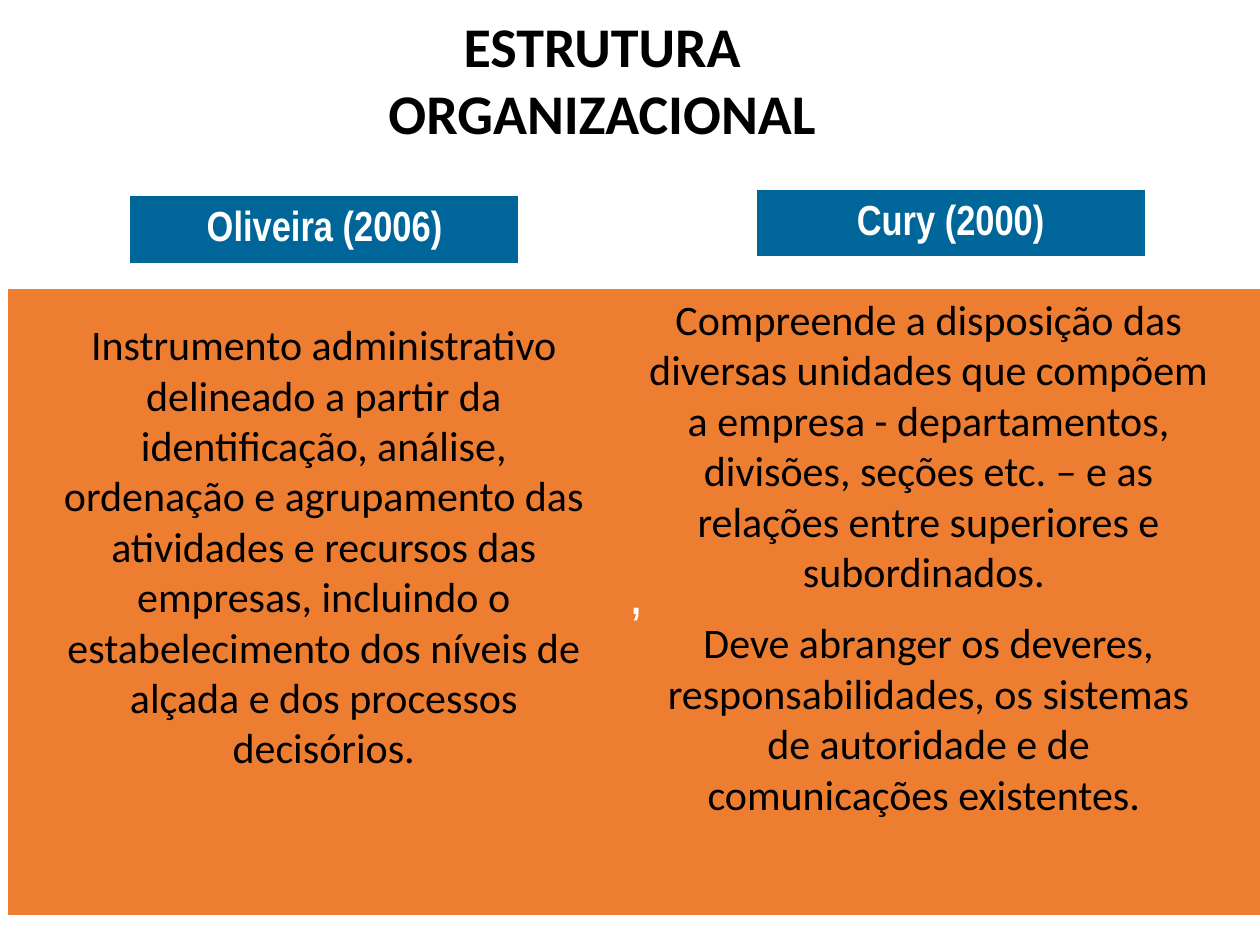
from pptx import Presentation
from pptx.dml.color import RGBColor
from pptx.enum.shapes import MSO_SHAPE
from pptx.enum.text import MSO_ANCHOR, MSO_AUTO_SIZE, PP_ALIGN
from pptx.util import Inches, Pt
from dataclasses import dataclass


@dataclass(frozen=True)
class Theme:
    black: RGBColor = RGBColor(0, 0, 0)
    white: RGBColor = RGBColor(255, 255, 255)
    blue: RGBColor = RGBColor(0, 102, 153)
    orange: RGBColor = RGBColor(237, 125, 49)
    body: str = "Calibri"
    label: str = "Arial Narrow"
    head: Pt = Pt(32)
    text: Pt = Pt(24)
    edge: Pt = Pt(2.25)
    gap: Pt = Pt(12)


theme = Theme()


def write(frame, lines, font, size, color, bold=False):
    """Fill a text frame with centred paragraphs in one style."""
    frame.text = "\n".join(lines)
    for par in frame.paragraphs:
        par.alignment = PP_ALIGN.CENTER
        for run in par.runs:
            run.font.name = font
            run.font.size = size
            run.font.bold = bold
            run.font.color.rgb = color


def add_panel(slide, box, fill, label):
    """Add a filled rectangle with a bold white label."""
    panel = slide.shapes.add_shape(MSO_SHAPE.RECTANGLE, *map(Inches, box))
    panel.shadow.inherit = False
    panel.fill.solid()
    panel.fill.fore_color.rgb = fill
    panel.line.color.rgb = theme.white
    panel.line.width = theme.edge
    frame = panel.text_frame
    frame.word_wrap = False
    frame.vertical_anchor = MSO_ANCHOR.MIDDLE
    write(frame, [label], theme.label, theme.text, theme.white, True)
    frame.paragraphs[0].line_spacing = 0.8


deck = Presentation()
deck.slide_width, deck.slide_height = Inches(10), Inches(7.5)
slide = deck.slides.add_slide(deck.slide_layouts[5])

title = slide.shapes.title
title.left, title.top = Inches(2.01), Inches(0.04)
title.width, title.height = Inches(5.54), Inches(1.18)
title.text_frame.auto_size = MSO_AUTO_SIZE.NONE
title.text_frame.vertical_anchor = MSO_ANCHOR.TOP
write(title.text_frame, ["ESTRUTURA ORGANIZACIONAL"],
      theme.body, theme.head, theme.black, True)

add_panel(slide, (0.05, 2.28, 10, 5), theme.orange, ",")

authors = [
    ("Cury (2000)", (5.99, 1.49), (5.05, 2.28, 4.64, 4.34), [
        "Compreende a disposição das diversas unidades que compõem a empresa "
        "- departamentos, divisões, seções etc. – e as relações entre "
        "superiores e subordinados. ",
        "Deve abranger os deveres, responsabilidades, os sistemas de "
        "autoridade e de comunicações existentes. ",
    ]),
    ("Oliveira (2006)", (1.02, 1.54), (0.32, 2.48, 4.5, 3.74), [
        "Instrumento administrativo delineado a partir da identificação, "
        "análise, ordenação e agrupamento das atividades e recursos das "
        "empresas, incluindo o estabelecimento dos níveis de alçada e dos "
        "processos decisórios.",
    ]),
]
for name, spot, box, lines in authors:
    add_panel(slide, (*spot, 3.11, 0.56), theme.blue, name)
    frame = slide.shapes.add_textbox(*map(Inches, box)).text_frame
    frame.word_wrap = True
    write(frame, lines, theme.body, theme.text, theme.black)
    for par in frame.paragraphs[1:]:
        par.space_before = theme.gap

deck.save("out.pptx")
